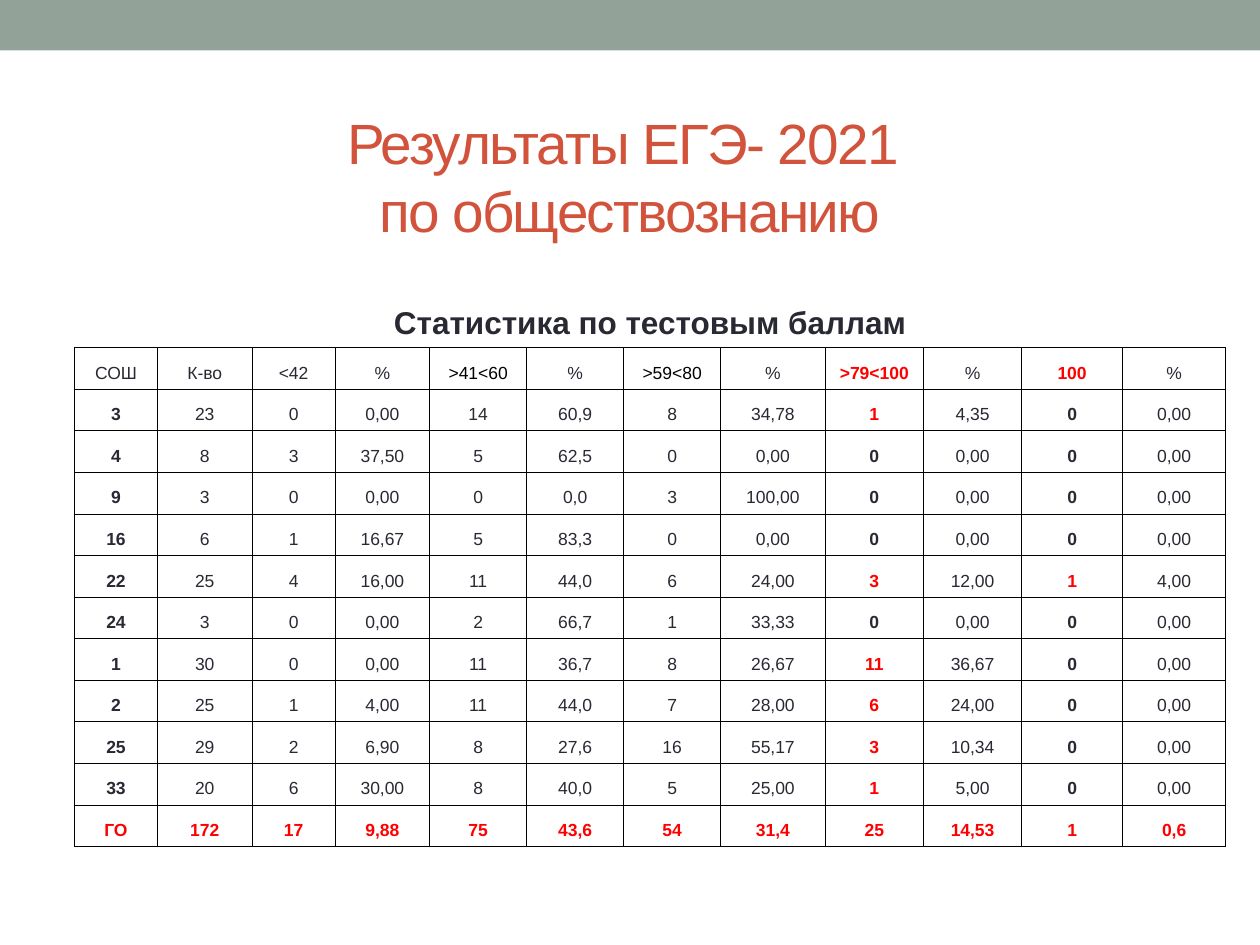
from lxml import etree
from pptx import Presentation
from pptx.dml.color import RGBColor
from pptx.enum.shapes import MSO_SHAPE
from pptx.enum.text import MSO_ANCHOR, MSO_AUTO_SIZE, PP_ALIGN
from pptx.oxml.ns import qn
from pptx.util import Inches, Pt

RECTANGLE = MSO_SHAPE.RECTANGLE
CENTER = PP_ALIGN.CENTER
MIDDLE, BOTTOM = MSO_ANCHOR.MIDDLE, MSO_ANCHOR.BOTTOM
NO_AUTOFIT = MSO_AUTO_SIZE.NONE

SAGE = RGBColor(0x93, 0xA2, 0x99)
BRICK = RGBColor(0xD2, 0x53, 0x3C)
INK = RGBColor(0x29, 0x29, 0x34)
BLACK = RGBColor(0, 0, 0)
RED = RGBColor(0xFF, 0, 0)
FONT = "Arial"

TITLE = "Результаты ЕГЭ- 2021 \vпо обществознанию"
CAPTION = "Статистика по тестовым баллам"
HEADER = "СОШ К-во <42 % >41<60 % >59<80 % >79<100 % 100 %".split()
SCHOOLS = [line.split() for line in (
    "3 23 0 0,00 14 60,9 8 34,78 1 4,35 0 0,00",
    "4 8 3 37,50 5 62,5 0 0,00 0 0,00 0 0,00",
    "9 3 0 0,00 0 0,0 3 100,00 0 0,00 0 0,00",
    "16 6 1 16,67 5 83,3 0 0,00 0 0,00 0 0,00",
    "22 25 4 16,00 11 44,0 6 24,00 3 12,00 1 4,00",
    "24 3 0 0,00 2 66,7 1 33,33 0 0,00 0 0,00",
    "1 30 0 0,00 11 36,7 8 26,67 11 36,67 0 0,00",
    "2 25 1 4,00 11 44,0 7 28,00 6 24,00 0 0,00",
    "25 29 2 6,90 8 27,6 16 55,17 3 10,34 0 0,00",
    "33 20 6 30,00 8 40,0 5 25,00 1 5,00 0 0,00",
)]
TOTAL = "ГО 172 17 9,88 75 43,6 54 31,4 25 14,53 1 0,6".split()
COLUMN_WIDTHS = (0.66, 0.75, 0.66, 0.75, 0.77, 0.77, 0.77, 0.83, 0.78, 0.78, 0.8, 0.82)
CAPTION_HEIGHT, ROW_HEIGHT = 0.53, 0.33
TOP_SCORE_COLUMNS = (8, 10)
MIDDLE_SCORE_COLUMNS = (4, 6)


def add_band(page, left, top, width, height):
    """Draw the plain band along the top edge."""
    band = page.shapes.add_shape(
        RECTANGLE, Inches(left), Inches(top), Inches(width), Inches(height))
    band.shadow.inherit = False
    band.fill.solid()
    band.fill.fore_color.rgb = SAGE
    band.line.fill.background()


def format_paragraph(para, size, color, bold=False):
    """Centre a paragraph and set its font."""
    para.alignment = CENTER
    para.font.name = FONT
    para.font.size = Pt(size)
    para.font.bold = bold
    para.font.color.rgb = color


def add_title(page, left, top, width, height):
    """Place the two-line title in the lower part of its box."""
    title = page.shapes.title
    title.left, title.top = Inches(left), Inches(top)
    title.width, title.height = Inches(width), Inches(height)
    frame = title.text_frame
    frame.text = TITLE
    frame.word_wrap = True
    frame.auto_size = NO_AUTOFIT
    frame.vertical_anchor = MIDDLE
    frame.margin_top = Inches(0.6)
    para = frame.paragraphs[0]
    format_paragraph(para, 32.4, BRICK)
    for span in para.runs:
        span.font._element.set("spc", "-100")


def set_borders(cell, visible):
    """Give a cell thin black lines on the named sides and none elsewhere."""
    properties = cell._tc.get_or_add_tcPr()
    for position, side in enumerate("LRTB"):
        line = etree.Element(qn(f"a:ln{side}"), w=str(Pt(0.5)))
        if side in visible:
            fill = etree.SubElement(line, qn("a:solidFill"))
            etree.SubElement(fill, qn("a:srgbClr"), val=str(BLACK))
        else:
            etree.SubElement(line, qn("a:noFill"))
        properties.insert(position, line)


def fill_cell(cell, text, borders, size=10, color=INK, bold=False):
    """Write one table cell with its font, insets and borders."""
    cell.text = text
    cell.fill.background()
    cell.vertical_anchor = BOTTOM
    cell.margin_left = cell.margin_right = cell.margin_top = Inches(0.01)
    cell.margin_bottom = Inches(0.05)
    format_paragraph(cell.text_frame.paragraphs[0], size, color, bold)
    set_borders(cell, borders)


def header_style(column):
    """Return the colour and weight of a column heading."""
    if column in TOP_SCORE_COLUMNS:
        return RED, True
    return (BLACK if column in MIDDLE_SCORE_COLUMNS else INK), False


def school_style(column, value):
    """Return the colour and weight of a school's value."""
    top_score = column in TOP_SCORE_COLUMNS
    return (RED if top_score and value != "0" else INK), top_score or column == 0


def add_results_table(page, left, top):
    """Build the score table with its caption row and open last row."""
    grid = [HEADER, *SCHOOLS, TOTAL]
    heights = [CAPTION_HEIGHT] + [ROW_HEIGHT] * (len(grid) + 1)
    table = page.shapes.add_table(
        len(heights), len(COLUMN_WIDTHS), Inches(left), Inches(top),
        Inches(sum(COLUMN_WIDTHS)), Inches(sum(heights))).table
    table.first_row = table.horz_banding = False
    for column, width in zip(table.columns, COLUMN_WIDTHS):
        column.width = Inches(width)
    for row, height in zip(table.rows, heights):
        row.height = Inches(height)

    last_row = len(heights) - 1
    for column in range(len(COLUMN_WIDTHS)):
        fill_cell(table.cell(0, column), "", "B")
        fill_cell(table.cell(last_row, column), "", "T")
    caption = table.cell(0, 0)
    caption.merge(table.cell(0, len(COLUMN_WIDTHS) - 1))
    caption.text = CAPTION
    format_paragraph(caption.text_frame.paragraphs[0], 18, INK, True)

    for row, values in enumerate(grid, start=1):
        for column, value in enumerate(values):
            if values is HEADER:
                color, bold = header_style(column)
            elif values is TOTAL:
                color, bold = RED, True
            else:
                color, bold = school_style(column, value)
            fill_cell(table.cell(row, column), value, "LRTB", color=color, bold=bold)


def main():
    """Assemble and save the slide."""
    deck = Presentation()
    deck.slide_width, deck.slide_height = Inches(10), Inches(7.5)
    page = deck.slides.add_slide(deck.slide_layouts[5])
    add_band(page, 0, 0, 10, 0.4)
    add_title(page, 0.5, 0.58, 9, 1.08)
    add_results_table(page, 0.59, 2.23)
    deck.save("out.pptx")


if __name__ == "__main__":
    main()
